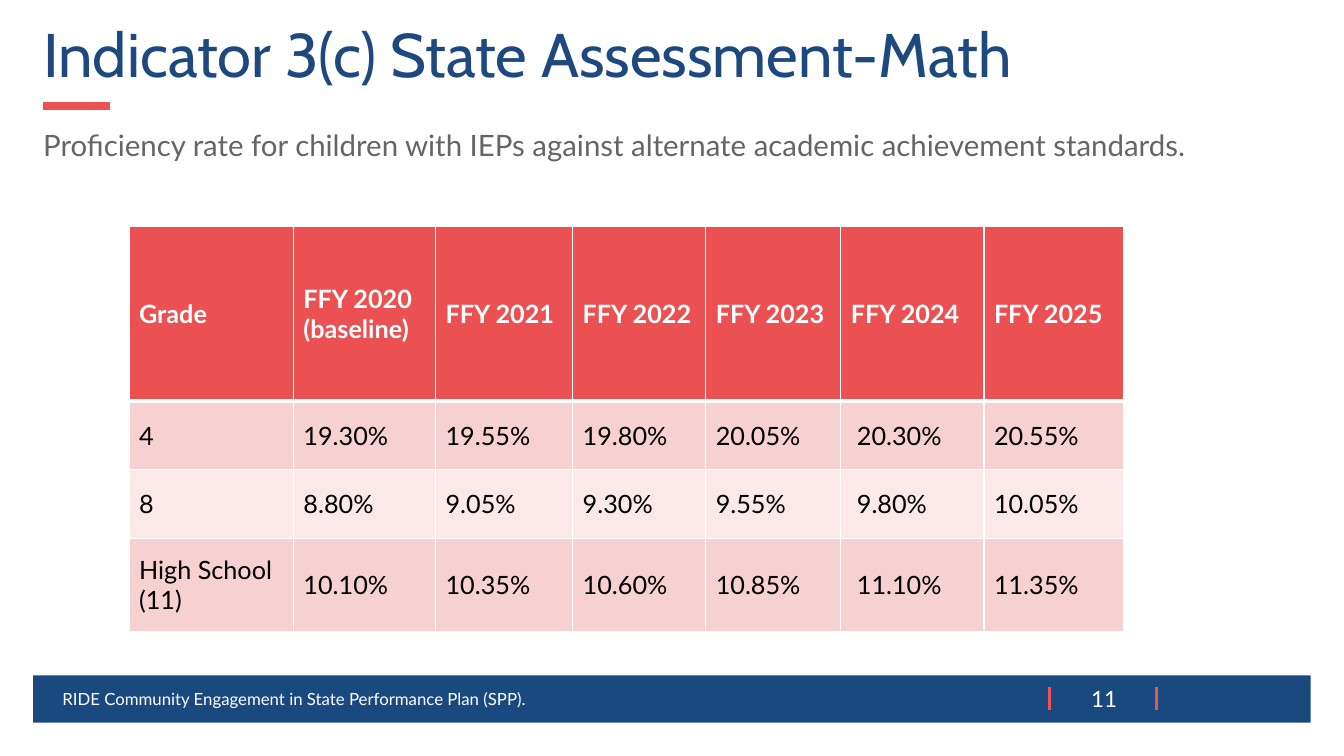
from dataclasses import dataclass

from lxml import etree
from pptx import Presentation
from pptx.dml.color import RGBColor
from pptx.enum.shapes import MSO_CONNECTOR, MSO_SHAPE
from pptx.enum.text import MSO_ANCHOR, PP_ALIGN
from pptx.oxml.ns import qn
from pptx.util import Pt

PX = 9144  # EMU per px, 100 px to the inch
TITLE_ONLY = 5
STRAIGHT = MSO_CONNECTOR.STRAIGHT
RECTANGLE = MSO_SHAPE.RECTANGLE
TOP, MIDDLE = MSO_ANCHOR.TOP, MSO_ANCHOR.MIDDLE
LEFT, CENTER = PP_ALIGN.LEFT, PP_ALIGN.CENTER


@dataclass(frozen=True)
class Theme:
    heading_font: str = "Cabin"
    body_font: str = "Lato"
    navy: str = "1E497F"
    bar: str = "1A497F"
    accent: str = "EC5153"
    header: str = "EB5152"
    bands: tuple = ("F7D0D1", "FBE9E9")
    gray: str = "656565"
    white: str = "FFFFFF"
    black: str = "000000"
    title_size: float = 44
    subtitle_size: float = 21
    table_size: float = 18
    number_size: float = 16
    footer_size: float = 12


THEME = Theme()

HEADINGS = ["Grade", "FFY 2020\n(baseline)", "FFY 2021", "FFY 2022",
            "FFY 2023", "FFY 2024", "FFY 2025"]
RATES = [
    ["4", "19.30%", "19.55%", "19.80%", "20.05%", "20.30%", "20.55%"],
    ["8", "8.80%", "9.05%", "9.30%", "9.55%", "9.80%", "10.05%"],
    ["High School (11)", "10.10%", "10.35%", "10.60%", "10.85%", "11.10%", "11.35%"],
]
COLUMN_WIDTHS = [163, 141, 136, 132, 134, 142, 139]
ROW_HEIGHTS = [173, 68, 68, 93]
INDENTED_COLUMN = HEADINGS.index("FFY 2024")
CELL_MARGIN, INDENTED_MARGIN = 10, 16


def emu(*lengths):
    return [length * PX for length in lengths]


def style(paragraph, size, color, font=THEME.body_font, bold=False, align=LEFT):
    paragraph.alignment = align
    paragraph.font.name = font
    paragraph.font.size = Pt(size)
    paragraph.font.bold = bold
    paragraph.font.color.rgb = RGBColor.from_string(color)


def set_frame(frame, anchor):
    frame.word_wrap = True
    frame.vertical_anchor = anchor
    frame.margin_left, frame.margin_top, frame.margin_right, frame.margin_bottom = emu(10, 5, 10, 5)


def add_text(slide, box, text, size, color, anchor=MIDDLE, align=LEFT):
    frame = slide.shapes.add_textbox(*emu(*box)).text_frame
    set_frame(frame, anchor)
    frame.text = text
    paragraph = frame.paragraphs[0]
    style(paragraph, size, color, align=align)
    return paragraph


def add_rule(slide, start, end, width):
    rule = slide.shapes.add_connector(STRAIGHT, *emu(*start, *end))
    rule.line.color.rgb = RGBColor.from_string(THEME.accent)
    rule.line.width = Pt(width)
    etree.SubElement(rule._element.spPr, qn("a:effectLst"))


def add_heading(slide, box, title, subtitle):
    left, top, width, height = box
    placeholder = slide.shapes.title
    placeholder.left, placeholder.top, placeholder.width, placeholder.height = emu(left, top, width, 77)
    frame = placeholder.text_frame
    set_frame(frame, MIDDLE)
    frame.text = title
    paragraph = frame.paragraphs[0]
    paragraph.line_spacing = 0.9
    style(paragraph, THEME.title_size, THEME.navy, THEME.heading_font)

    add_rule(slide, (left + 10, top + 86), (left + 76, top + 86), 6)
    paragraph = add_text(slide, (left, top + 94, width, height - 94), subtitle,
                         THEME.subtitle_size, THEME.gray, TOP)
    paragraph.line_spacing = 1.23
    paragraph.space_after = Pt(6)


def set_borders(cell, widths):
    """Draw white borders; widths maps a side tag to points."""
    properties = cell._tc.get_or_add_tcPr()
    for position, (side, width) in enumerate(widths.items()):
        line = etree.Element(qn(f"a:{side}"), w=str(Pt(width)))
        fill = etree.SubElement(line, qn("a:solidFill"))
        etree.SubElement(fill, qn("a:srgbClr"), val=THEME.white)
        properties.insert(position, line)


def fill_cell(cell, text, row, column):
    is_header = row == 0
    background = THEME.header if is_header else THEME.bands[(row - 1) % 2]
    indented = column == INDENTED_COLUMN and not is_header
    cell.fill.solid()
    cell.fill.fore_color.rgb = RGBColor.from_string(background)
    cell.vertical_anchor = MIDDLE
    cell.margin_left = (INDENTED_MARGIN if indented else CELL_MARGIN) * PX
    cell.margin_right = CELL_MARGIN * PX
    cell.text = text
    for paragraph in cell.text_frame.paragraphs:
        style(paragraph, THEME.table_size, THEME.white if is_header else THEME.black, bold=is_header)
    set_borders(cell, {"lnL": 1, "lnR": 1, "lnT": 3 if row == 1 else 1, "lnB": 3 if is_header else 1})


def add_rate_table(slide, left, top):
    rows = [HEADINGS, *RATES]
    size = sum(COLUMN_WIDTHS), sum(ROW_HEIGHTS)
    table = slide.shapes.add_table(len(rows), len(HEADINGS), *emu(left, top, *size)).table
    for column, width in zip(table.columns, COLUMN_WIDTHS):
        column.width = width * PX
    for row, height in zip(table.rows, ROW_HEIGHTS):
        row.height = height * PX
    for row, texts in enumerate(rows):
        for column, text in enumerate(texts):
            fill_cell(table.cell(row, column), text, row, column)


def add_footer(slide, box, text, number):
    left, top, width, height = box
    bar = slide.shapes.add_shape(RECTANGLE, *emu(*box))
    bar.shadow.inherit = False
    bar.fill.solid()
    bar.fill.fore_color.rgb = RGBColor.from_string(THEME.bar)
    bar.line.fill.background()
    for offset in (1008, 1114):
        add_rule(slide, (left + offset, top + 12), (left + offset, top + 34), 2.25)
    add_text(slide, (left + 19, top + 3, 847, 40), text, THEME.footer_size, THEME.white)
    add_text(slide, (left + 1030, top + 5, 64, 37), number, THEME.number_size, THEME.white, align=CENTER)


def main():
    presentation = Presentation()
    presentation.slide_width, presentation.slide_height = emu(1333, 750)
    slide = presentation.slides.add_slide(presentation.slide_layouts[TITLE_ONLY])
    add_footer(slide, (33, 670, 1267, 47),
               "RIDE Community Engagement in State Performance Plan (SPP).", "11")
    add_heading(slide, (33, 19, 1267, 187), "Indicator 3(c) State Assessment-Math",
                "Proficiency rate for children with IEPs against alternate academic achievement standards.")
    add_rate_table(slide, 128, 225)
    presentation.save("out.pptx")


if __name__ == "__main__":
    main()
